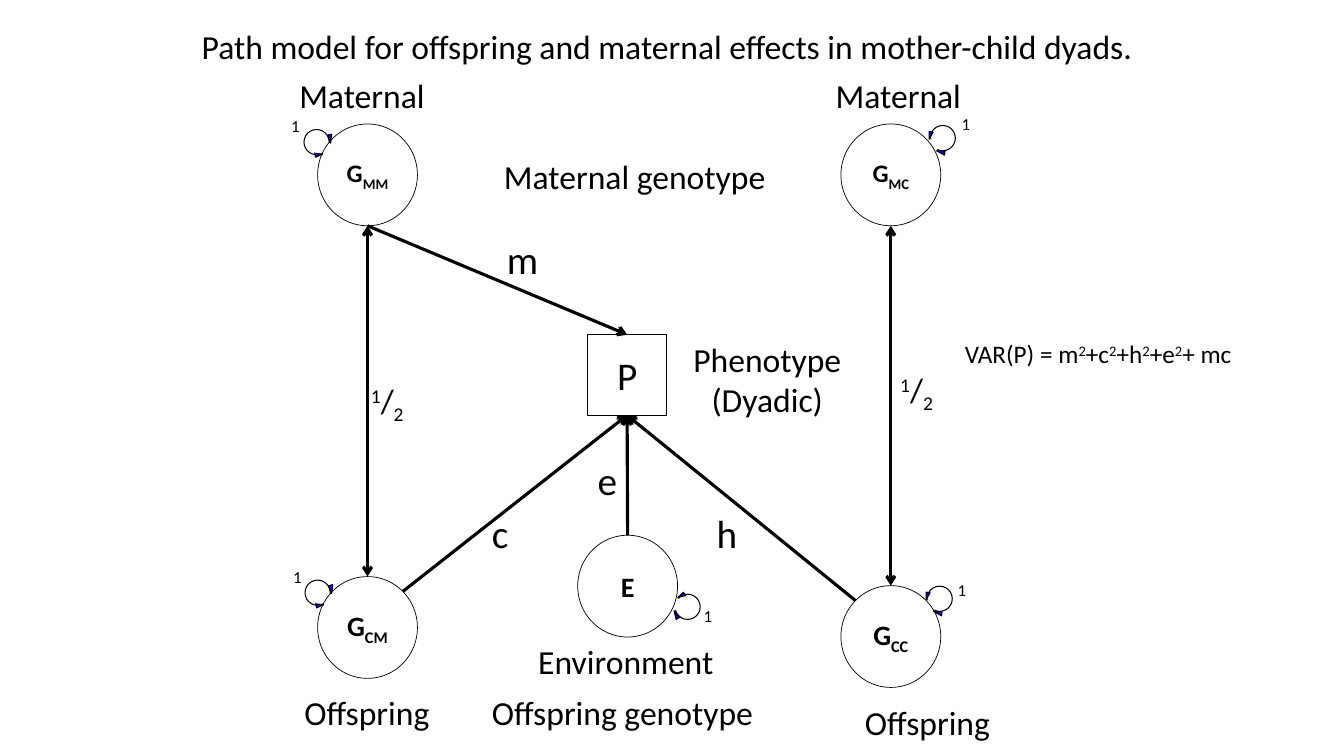
import math
from pptx import Presentation, util as u
from pptx.dml import color
from pptx.enum import shapes, text
from pptx.oxml import ns
from lxml import etree

COLORS = {"ink": "000000", "paper": "FFFFFF", "marker": "0000FF"}
COLUMNS, ROWS = 133.3, 75
SUPER, NORMAL, SUB = 30, 0, -25


class PathDiagram:
    font = "Calibri"
    label_size = 24
    letter_size = 28
    thin, loop_line, thick = 0.5, 0.75, 2.25
    arc_start, arc_end, loop_radius = 61, 4, 1.25
    loop_markers = (
        ((1.4, 0.1), (1.5, -0.8), (1.1, -0.7)),
        ((0.6, 1.2), (-0.2, 1.1), (-0.1, 1.5)),
    )

    def __init__(self, presentation):
        self.column = presentation.slide_width / COLUMNS
        self.row = presentation.slide_height / ROWS
        self.slide = presentation.slides.add_slide(presentation.slide_layouts[5])
        self.shapes = self.slide.shapes

    def place(self, column, row):
        return round(column * self.column), round(row * self.row)

    def box(self, left, top, width, height):
        return self.place(left, top) + self.place(width, height)

    def rgb(self, name):
        return color.RGBColor.from_string(COLORS[name])

    def paint(self, shape, fill, width):
        shape.shadow.inherit = False
        if fill:
            shape.fill.solid()
            shape.fill.fore_color.rgb = self.rgb(fill)
        else:
            shape.fill.background()
        shape.line.color.rgb = self.rgb("ink")
        shape.line.width = u.Pt(width)

    def add_lines(self, frame, lines, size, align, anchor, bold=False):
        frame.word_wrap = True
        frame.vertical_anchor = anchor
        for index, runs in enumerate(lines):
            paragraph = frame.add_paragraph() if index else frame.paragraphs[0]
            paragraph.alignment = align
            for words, baseline in runs:
                run = paragraph.add_run()
                run.text = words
                run.font.name = self.font
                run.font.size = u.Pt(size)
                run.font.bold = bold
                run.font.color.rgb = self.rgb("ink")
                if baseline:
                    run._r.get_or_add_rPr().set("baseline", str(baseline * 1000))

    def title(self, area, words):
        title = self.shapes.title
        title.left, title.top, title.width, title.height = self.box(*area)
        title.text_frame.auto_size = text.MSO_AUTO_SIZE.NONE
        self.add_lines(title.text_frame, [[(words, NORMAL)]], self.label_size,
                       text.PP_ALIGN.LEFT, text.MSO_ANCHOR.TOP)

    def label(self, area, lines, size=label_size, align=text.PP_ALIGN.LEFT):
        label = self.shapes.add_textbox(*self.box(*area))
        self.add_lines(label.text_frame, lines, size, align, text.MSO_ANCHOR.TOP)
        label.text_frame.auto_size = text.MSO_AUTO_SIZE.SHAPE_TO_FIT_TEXT

    def node(self, kind, area, runs, size, fill=None, bold=True):
        node = self.shapes.add_shape(kind, *self.box(*area))
        self.paint(node, fill, self.thin)
        self.add_lines(node.text_frame, [runs], size, text.PP_ALIGN.CENTER,
                       text.MSO_ANCHOR.MIDDLE, bold)
        return node

    def circle(self, left, top, runs, size):
        return self.node(shapes.MSO_SHAPE.OVAL, (left, top, 9.9, 10.1), runs, size)

    def rim(self, circle, angle):
        turn = math.radians(angle)
        return (round(circle.left + circle.width / 2 * (1 + math.cos(turn))),
                round(circle.top + circle.height / 2 * (1 + math.sin(turn))))

    def arrow(self, source, angle, target, side, double=False):
        start = self.rim(source, angle)
        arrow = self.shapes.add_connector(shapes.MSO_CONNECTOR.STRAIGHT, *start, *start)
        if angle == -90:
            arrow.begin_connect(source, 0)
        arrow.end_connect(target, side)
        arrow.line.color.rgb = self.rgb("ink")
        arrow.line.width = u.Pt(self.thick)
        line = arrow.line._get_or_add_ln()
        for end in ("a:headEnd", "a:tailEnd") if double else ("a:tailEnd",):
            etree.SubElement(line, ns.qn(end), type="arrow")
        etree.SubElement(arrow._element.spPr, ns.qn("a:effectLst"))

    def loop(self, column, row, turn):
        radius = self.loop_radius
        arc = self.shapes.add_shape(shapes.MSO_SHAPE.ARC, *self.box(
            column - radius, row - radius, 2 * radius, 2 * radius))
        for index, angle in enumerate((self.arc_start, self.arc_end)):
            arc.adjustments[index] = (angle + turn) % 360 * 0.6
        self.paint(arc, None, self.loop_line)
        cosine, sine = math.cos(math.radians(turn)), math.sin(math.radians(turn))
        for marker in self.loop_markers:
            corners = [self.place(column + x * cosine - y * sine,
                                  row + x * sine + y * cosine) for x, y in marker]
            builder = self.shapes.build_freeform(*corners[0])
            builder.add_line_segments(corners[1:], close=True)
            self.paint(builder.convert_to_shape(), "marker", self.loop_line)


def main():
    presentation = Presentation()
    presentation.slide_width, presentation.slide_height = u.Inches(13.33), u.Inches(7.5)
    diagram = PathDiagram(presentation)
    diagram.title((19, 2.1, 97.7, 5),
                  "Path model for offspring and maternal effects in mother-child dyads.")

    circles = {}
    for name, left, top, size in (
        ("MM", 31.5, 12.3, 18), ("MC", 83.4, 12.3, 18),
        ("CM", 31.5, 57.2, 20), ("CC", 83.4, 58.1, 20),
    ):
        circles[name] = diagram.circle(left, top, [("G", NORMAL), (name, SUB)], size)
    environment = diagram.circle(57.3, 53.1, [("E", NORMAL)], 20)
    phenotype = diagram.node(shapes.MSO_SHAPE.RECTANGLE, (58.3, 33.2, 7.8, 8),
                             [("P", NORMAL)], diagram.letter_size, "paper", False)

    for mother, child in (("MM", "CM"), ("MC", "CC")):
        diagram.arrow(circles[mother], 90, circles[child], 0, double=True)
    for source, angle, side in (
        (circles["MM"], 90, 0), (circles["CM"], -45, 2),
        (circles["CC"], -135, 2), (environment, -90, 2),
    ):
        diagram.arrow(source, angle, phenotype, side)

    for left, top in ((35.8, 37.2), (88.3, 36.1)):
        diagram.label((left, top, 6.1, 5), [[("1", SUPER), ("/", NORMAL), ("2", SUB)]])
    for letter, left, top, width in (
        ("m", 49.3, 22.9, 5), ("c", 47.8, 50, 7.2),
        ("h", 70.1, 50, 9.6), ("e", 58.3, 44.8, 7.2),
    ):
        diagram.label((left, top, width, 5.7), [[(letter, NORMAL)]], diagram.letter_size)
    for words, left, top, width in (
        ("Maternal", 28.7, 6.9, 14.6), ("Maternal", 81.9, 6.9, 14.6),
        ("Offspring", 29.2, 68.2, 14.6), ("Offspring", 84.8, 69.1, 14.6),
        ("Maternal genotype", 49, 15, 28.3), ("Offspring genotype", 47.8, 68.2, 28.3),
        ("Environment", 52.4, 63.1, 19.7),
    ):
        diagram.label((left, top, width, 5), [[(words, NORMAL)]])
    diagram.label((67.7, 33.1, 16.8, 9.1), [[("Phenotype", NORMAL)], [("(Dyadic)", NORMAL)]],
                  align=text.PP_ALIGN.CENTER)

    variance = []
    for term in ("VAR(P) = m", "+c", "+h", "+e"):
        variance += [(term, NORMAL), ("2", SUPER)]
    diagram.label((94.7, 33.1, 29.2, 4), [variance + [("+ mc", NORMAL)]], 18)

    for column, row, turn, left, top in (
        (31.5, 58.8, 0, 28.1, 55.7), (31.4, 14.1, 0, 27.9, 11),
        (93.2, 59.4, 112, 94, 57), (93.5, 13.7, 112, 94.4, 10.8),
        (68.2, 60.2, 160, 68.8, 59.6),
    ):
        diagram.loop(column, row, turn)
        diagram.label((left, top, 2.9, 3), [[("1", NORMAL)]], 12)

    presentation.save("out.pptx")


if __name__ == "__main__":
    main()
